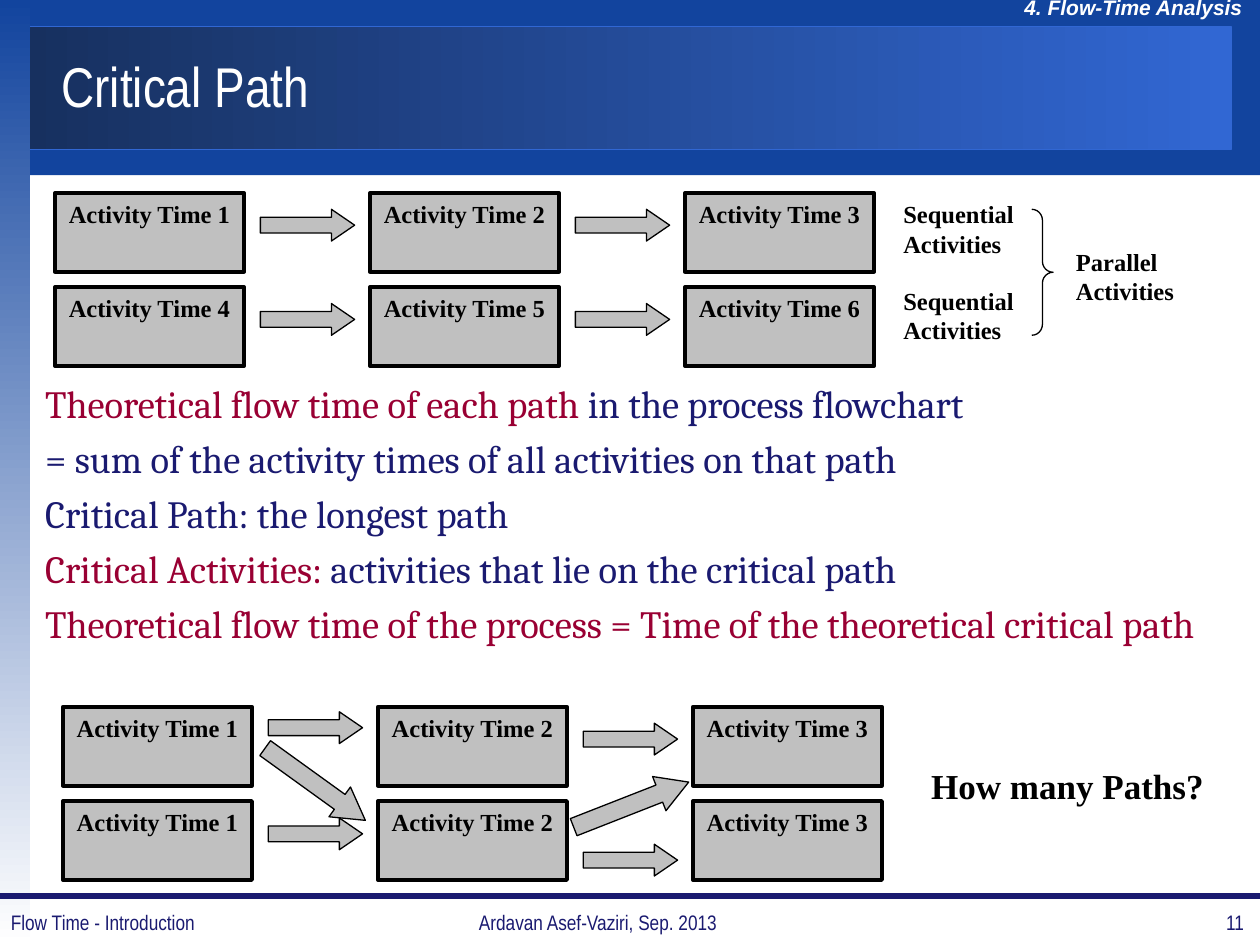
from dataclasses import dataclass

from lxml import etree
from pptx import Presentation
from pptx import util as u
from pptx.dml.color import RGBColor
from pptx.enum import shapes, text
from pptx.oxml import ns

NAVY = RGBColor(0x1A, 0x1A, 0x70)
BLUE = RGBColor(0x12, 0x44, 0x9E)
BAR_DARK = RGBColor(0x17, 0x30, 0x5F)
BAR_LIGHT = RGBColor(0x31, 0x67, 0xD3)
CRIMSON = RGBColor(0x99, 0x00, 0x33)
GREY = RGBColor(0xC0, 0xC0, 0xC0)
BLACK = RGBColor(0, 0, 0)
WHITE = RGBColor(0xFF, 0xFF, 0xFF)

HEADER = {"name": "Arial", "size": u.Pt(12), "bold": True, "italic": True}
TITLE = {"name": "Arial Narrow", "size": u.Pt(32)}
BODY = {"name": "Cambria", "size": u.Pt(22)}
LABEL = {"name": "Times New Roman", "size": u.Pt(14), "bold": True}
QUESTION = LABEL | {"size": u.Pt(20)}
FOOTER = {"name": "Arial Narrow", "size": u.Pt(12)}

LEFT, CENTER, RIGHT = (text.PP_ALIGN.LEFT, text.PP_ALIGN.CENTER,
                       text.PP_ALIGN.RIGHT)
TOP, MIDDLE = text.MSO_ANCHOR.TOP, text.MSO_ANCHOR.MIDDLE
RECT = shapes.MSO_SHAPE.RECTANGLE

COLUMN_STEP, ROW_STEP = 6.35, 1.9
HANGING = u.Cm(0.95)


@dataclass(frozen=True)
class Area:
    """A rectangle in centimetres."""
    left: float
    top: float
    width: float
    height: float

    def lengths(self) -> list:
        return [u.Cm(v) for v in (self.left, self.top, self.width, self.height)]


@dataclass(frozen=True)
class Arrow:
    """A block arrow placed relative to its flowchart's corner."""
    dx: float
    dy: float
    angle: float = 0
    width: float = 1.9
    height: float = 0.64
    head: float = 0.73


@dataclass(frozen=True)
class Flowchart:
    left: float
    top: float
    rows: tuple
    arrows: tuple


@dataclass(frozen=True)
class Caption:
    area: Area
    words: str
    style: dict
    color: RGBColor
    align: text.PP_ALIGN = LEFT
    anchor: text.MSO_ANCHOR = MIDDLE
    wrap: bool = True


FLOWCHARTS = (
    Flowchart(1.11, 3.89, ((1, 2, 3), (4, 5, 6)),
              tuple(Arrow(4.14 + COLUMN_STEP * column, 0.33 + ROW_STEP * row)
                    for row in range(2) for column in range(2))),
    Flowchart(1.27, 14.25, ((1, 2, 3), (1, 2, 3)),
              (Arrow(4.14, 0.1), Arrow(10.49, 0.33),
               Arrow(4.14, 2.24), Arrow(10.49, 2.77),
               Arrow(3.84, 1.19, 35.8, 2.49, 0.74, 0.86),
               Arrow(10.21, 1.6, 338.6, 2.49, 0.74, 0.86))),
)

CAPTIONS = (
    Caption(Area(20.4, -0.23, 5.31, 0.76), "4. Flow-Time Analysis", HEADER,
            WHITE, anchor=TOP, wrap=False),
    Caption(Area(0.99, 0.53, 23.6, 2.39), "Critical Path", TITLE, WHITE),
    Caption(Area(21.44, 4.85, 2.54, 1.6), "Parallel Activities", LABEL, BLACK,
            anchor=TOP),
    Caption(Area(18.52, 15.29, 6.4, 1.45), "How many Paths?", QUESTION, BLACK,
            anchor=TOP),
    Caption(Area(-0.03, 18.08, 5.92, 1.02), "Flow Time - Introduction",
            FOOTER, NAVY),
    Caption(Area(8.03, 18.08, 8.05, 1.02), "Ardavan Asef-Vaziri, Sep. 2013",
            FOOTER, NAVY, CENTER),
    Caption(Area(19.41, 18.08, 5.92, 1.02), "11", FOOTER, NAVY, RIGHT),
)

STATEMENTS = (
    (("Theoretical flow time of each path ", CRIMSON),
     ("in the process flowchart", NAVY)),
    (("= sum of the activity times of all activities on that path", NAVY),),
    (("Critical Path: the longest path", NAVY),),
    (("Critical Activities: ", CRIMSON),
     ("activities that lie on the critical path", NAVY)),
    (("Theoretical flow time of the process = "
      "Time of the theoretical critical path", CRIMSON),),
)


def add_run(paragraph, words: str, style: dict, color: RGBColor) -> None:
    run = paragraph.add_run()
    run.text = words
    for name, value in style.items():
        setattr(run.font, name, value)
    run.font.color.rgb = color


def add_figure(slide, kind, area: Area, fill=None, line=None, weight=0.75):
    """Add a preset shape; a pair of fill colours makes a gradient."""
    figure = slide.shapes.add_shape(kind, *area.lengths())
    figure.shadow.inherit = False
    if fill is None:
        figure.fill.background()
    elif isinstance(fill, RGBColor):
        figure.fill.solid()
        figure.fill.fore_color.rgb = fill
    else:
        figure.fill.gradient()
        for stop, color in zip(figure.fill.gradient_stops, fill):
            stop.color.rgb = color
    if line is None:
        figure.line.fill.background()
    else:
        figure.line.color.rgb = line
        figure.line.width = u.Pt(weight)
    return figure


def add_frame(slide, area: Area, anchor=TOP, wrap: bool = True):
    frame = slide.shapes.add_textbox(*area.lengths()).text_frame
    frame.word_wrap = wrap
    frame.vertical_anchor = anchor
    return frame


def draw_backdrop(slide) -> None:
    add_figure(slide, RECT, Area(0.51, 0, 24.89, 3.53), BLUE)
    title_bar = add_figure(slide, RECT, Area(0.51, 0.53, 24.31, 2.49),
                           (BAR_DARK, BAR_LIGHT), BAR_LIGHT)
    title_bar.fill.gradient_angle = 0
    side_bar = add_figure(slide, RECT, Area(0, 0, 0.61, 19.05), (BLUE, WHITE))
    side_bar.fill.gradient_angle = 270
    rule = slide.shapes.add_connector(shapes.MSO_CONNECTOR.STRAIGHT, u.Cm(0),
                                      u.Cm(18.06), u.Cm(25.4), u.Cm(18.06))
    rule.line.color.rgb = NAVY
    rule.line.width = u.Pt(3)
    etree.SubElement(rule.element.spPr, ns.qn("a:effectLst"))


def draw_caption(slide, caption: Caption) -> None:
    frame = add_frame(slide, caption.area, caption.anchor, caption.wrap)
    paragraph = frame.paragraphs[0]
    paragraph.alignment = caption.align
    add_run(paragraph, caption.words, caption.style, caption.color)


def draw_statements(slide) -> None:
    frame = add_frame(slide, Area(0.66, 7.54, 24.74, 5.49))
    for index, parts in enumerate(STATEMENTS):
        paragraph = frame.add_paragraph() if index else frame.paragraphs[0]
        paragraph.space_before = u.Pt(5)
        properties = paragraph._p.get_or_add_pPr()
        properties.set("marL", str(HANGING))
        properties.set("indent", str(-HANGING))
        for words, color in parts:
            add_run(paragraph, words, BODY, color)


def draw_flowchart(slide, chart: Flowchart) -> None:
    for row, numbers in enumerate(chart.rows):
        for column, number in enumerate(numbers):
            area = Area(chart.left + COLUMN_STEP * column,
                        chart.top + ROW_STEP * row, 3.81, 1.59)
            frame = add_figure(slide, RECT, area, GREY, BLACK, 2.25).text_frame
            frame.word_wrap = False
            frame.vertical_anchor = TOP
            frame.paragraphs[0].alignment = CENTER
            add_run(frame.paragraphs[0], f"Activity Time {number}", LABEL, BLACK)
    for arrow in chart.arrows:
        area = Area(chart.left + arrow.dx, chart.top + arrow.dy,
                    arrow.width, arrow.height)
        block = add_figure(slide, shapes.MSO_SHAPE.RIGHT_ARROW, area, GREY, BLACK)
        block.adjustments[1] = arrow.head
        block.rotation = arrow.angle


def draw_parallel_brace(slide) -> None:
    brace = add_figure(slide, shapes.MSO_SHAPE.RIGHT_BRACE,
                       Area(20.8, 4.22, 0.43, 2.54), line=BLACK)
    brace.adjustments[0] = 0.51
    frame = add_frame(slide, Area(17.96, 3.89, 2.84, 3.18))
    upper, lower = frame.paragraphs[0], frame.add_paragraph()
    lower.space_before = u.Pt(16)
    for paragraph in (upper, lower):
        add_run(paragraph, "Sequential Activities", LABEL, BLACK)


def main() -> None:
    deck = Presentation()
    deck.slide_width, deck.slide_height = u.Cm(25.4), u.Cm(19.05)
    slide = deck.slides.add_slide(deck.slide_layouts[6])
    draw_backdrop(slide)
    draw_statements(slide)
    for chart in FLOWCHARTS:
        draw_flowchart(slide, chart)
    draw_parallel_brace(slide)
    for caption in CAPTIONS:
        draw_caption(slide, caption)
    deck.save("out.pptx")


if __name__ == "__main__":
    main()
